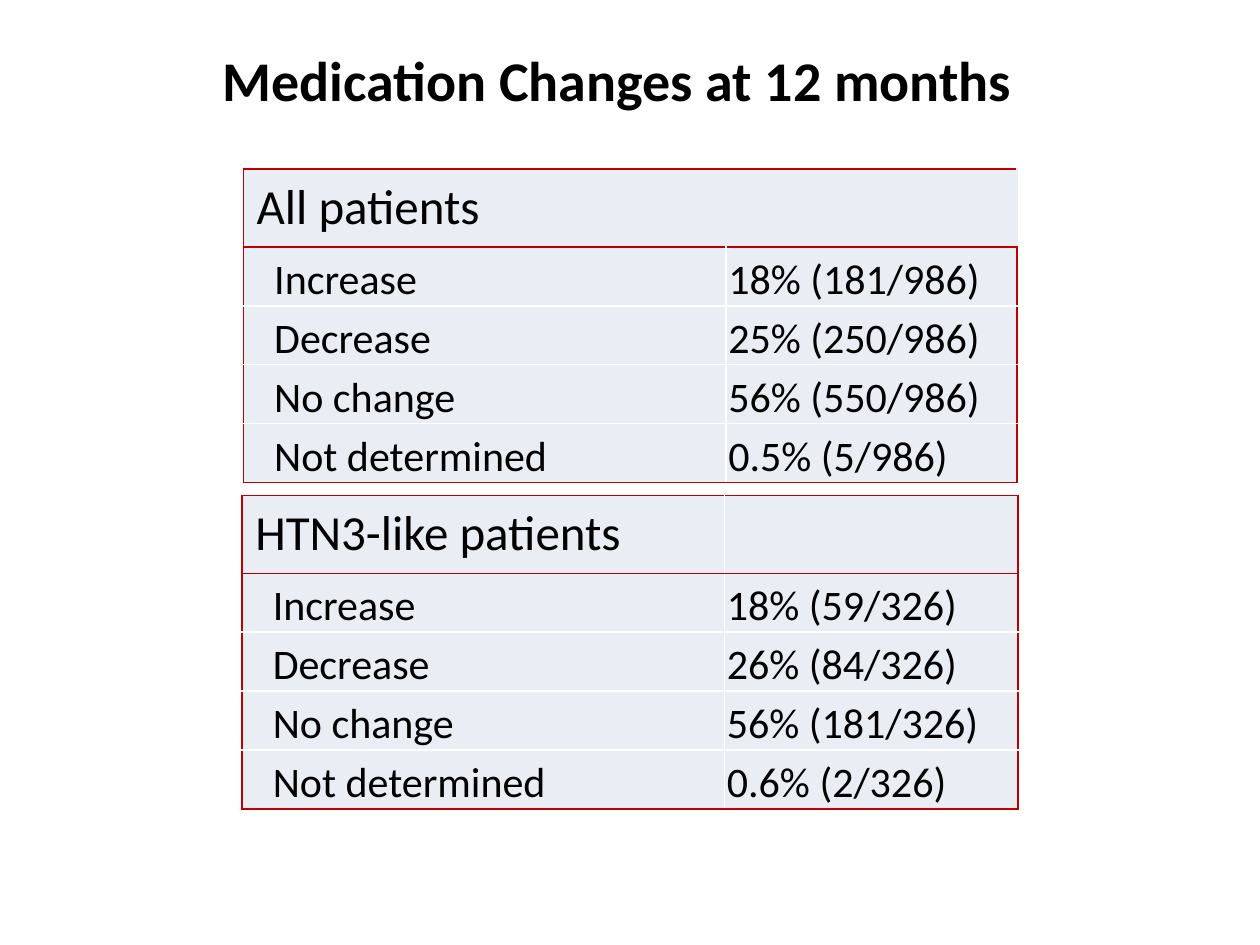
"""Build a slide with two tables of medication changes at 12 months."""
from lxml import etree
from pptx import Presentation
from pptx import util as u
from pptx.dml.color import RGBColor
from pptx.enum import text as t
from pptx.oxml.ns import qn

Pt = u.Pt
HUES = {"ink": "000000", "edge": "C00000", "grid": "FFFFFF", "cell": "E9EDF4"}
NAMES = ["Increase", "Decrease", "No change", "Not determined"]


def write(frame, words, size=24, bold=False, align=t.PP_ALIGN.LEFT, lead=None, gap=None):
    para = frame.paragraphs[0]
    para.alignment = align
    para.line_spacing = lead
    para.space_before = para.space_after = gap
    run = para.add_run()
    run.text = words
    run.font.name = "Calibri"
    run.font.size = Pt(size)
    run.font.bold = bold
    run.font.color.rgb = RGBColor.from_string(HUES["ink"])


class Deck:
    def __init__(self):
        self.show = Presentation()
        self.show.slide_width, self.show.slide_height = Pt(720), Pt(540)
        self.slide = self.show.slides.add_slide(self.show.slide_layouts[5])

    def title(self, words):
        box = self.slide.shapes.title
        box.left, box.top, box.width, box.height = Pt(36), Pt(0), Pt(648), Pt(90)
        frame = box.text_frame
        frame.vertical_anchor = t.MSO_ANCHOR.MIDDLE
        frame.margin_right = Pt(21.7)
        write(frame, words, size=32, bold=True, align=t.PP_ALIGN.CENTER)

    def border(self, cell, sides):
        props = cell._tc.get_or_add_tcPr()
        for side, hue in zip("LRTB", sides):
            line = etree.SubElement(props, qn(f"a:ln{side}"), w=str(Pt(1)))
            fill = etree.SubElement(line, qn("a:solidFill"))
            etree.SubElement(fill, qn("a:srgbClr"), val=HUES[hue])

    def table(self, left, top, widths, head, values, merge=False):
        heights = [44.6] + [33.6] * len(values)
        grid = self.slide.shapes.add_table(
            len(heights), 2, Pt(left), Pt(top), Pt(sum(widths)), Pt(sum(heights))).table
        grid.first_row = grid.horz_banding = False
        for col, width in zip(grid.columns, widths):
            col.width = Pt(width)
        for row, height in zip(grid.rows, heights):
            row.height = Pt(height)
        if merge:
            grid.cell(0, 0).merge(grid.cell(0, 1))
        last = len(values)
        for r, pair in enumerate([(head, "")] + list(zip(NAMES, values))):
            for c, words in enumerate(pair):
                cell = grid.cell(r, c)
                inner = "cell" if merge and r == 0 else "grid"
                self.border(cell, [
                    inner if c else "edge",
                    "edge" if c else inner,
                    "edge" if r < 2 else "grid",
                    "edge" if r in (0, last) else "grid"])
                cell.fill.solid()
                cell.fill.fore_color.rgb = RGBColor.from_string(HUES["cell"])
                cell.margin_left = Pt(1.4 if c else 17.7 if r else 7.7)
                cell.margin_right = Pt(1.4)
                cell.margin_top = cell.margin_bottom = Pt(0)
                if words:
                    write(cell.text_frame, words, size=24 if r else 28,
                          lead=1.15, gap=Pt(1.4))


def main():
    deck = Deck()
    deck.title("Medication Changes at 12 months")
    deck.table(138.2, 283, (275.8, 167.8), "HTN3-like patients",
               ["18% (59/326)", "26% (84/326)", "56% (181/326)", "0.6% (2/326)"])
    deck.table(139, 96.5, (275.8, 166.3), "All patients",
               ["18% (181/986)", "25% (250/986)", "56% (550/986)", "0.5% (5/986)"],
               merge=True)
    deck.show.save("out.pptx")


if __name__ == "__main__":
    main()
